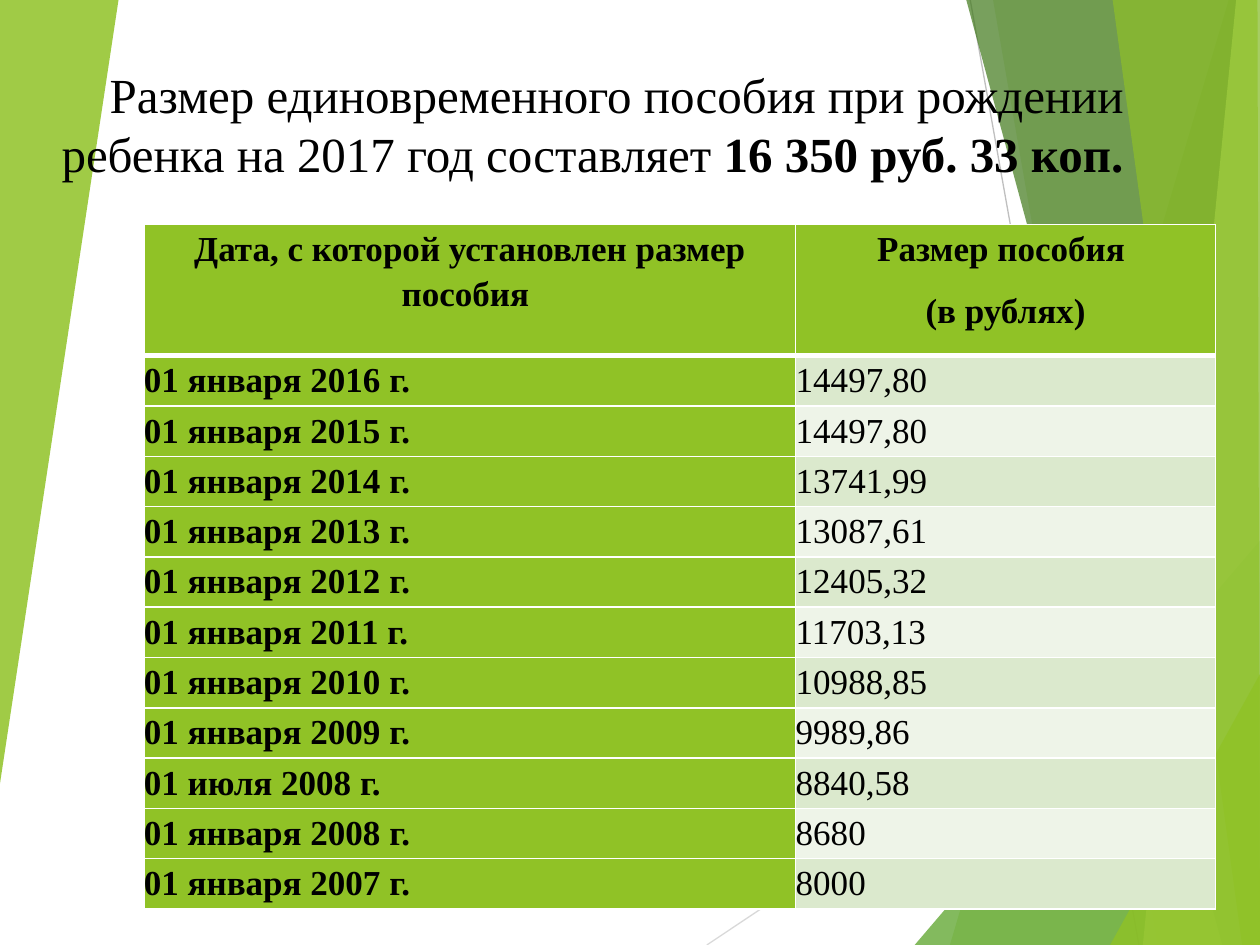
from lxml.etree import SubElement
from pptx import Presentation
from pptx.dml.color import RGBColor
from pptx.enum.shapes import MSO_CONNECTOR
from pptx.enum.text import MSO_ANCHOR, MSO_AUTO_SIZE, PP_ALIGN
from pptx.oxml import parse_xml
from pptx.oxml.ns import nsdecls, qn
from pptx.util import Cm, Pt

BLACK = RGBColor(0x00, 0x00, 0x00)
GREEN = RGBColor(0x90, 0xC2, 0x26)
MID_GREEN = RGBColor(0x54, 0xA0, 0x21)
DARK_GREEN = RGBColor(0x3F, 0x78, 0x19)
LIME = RGBColor(0xC0, 0xE4, 0x74)
BANDS = (RGBColor(0xDB, 0xE9, 0xCD), RGBColor(0xEE, 0xF4, 0xE8))
PALE_GRAY = RGBColor(0xD9, 0xD9, 0xD9)
GRAY = RGBColor(0xBF, 0xBF, 0xBF)
FONT = "Times New Roman"

HEADER = ("Дата, с которой установлен размер пособия ", "Размер пособия \n(в рублях)")
ROWS = (
    ("01 января 2016 г.", "14497,80"),
    ("01 января 2015 г.", "14497,80"),
    ("01 января 2014 г.", "13741,99"),
    ("01 января 2013 г.", "13087,61"),
    ("01 января 2012 г.", "12405,32"),
    ("01 января 2011 г.", "11703,13"),
    ("01 января 2010 г.", "10988,85"),
    ("01 января 2009 г.", "9989,86"),
    ("01 июля 2008 г.", "8840,58"),
    ("01 января 2008 г.", "8680"),
    ("01 января 2007 г.", "8000"),
)


def style_run(r, size, bold):
    """Give a run the slide's typeface and black colour."""
    r.font.name = FONT
    r.font.size = Pt(size)
    r.font.bold = bold
    r.font.color.rgb = BLACK


def add_facet(slide, left, top, points, color, opacity):
    """Draw a translucent polygon from points in centimetres within a box."""
    pts = [(left + Cm(x), top + Cm(y)) for x, y in points]
    builder = slide.shapes.build_freeform(*pts[0])
    builder.add_line_segments(pts[1:])
    sp = builder.convert_to_shape()
    sp.shadow.inherit = False
    sp.fill.solid()
    sp.fill.fore_color.rgb = color
    sp.line.fill.background()
    clr = sp.fill._xPr.find(qn("a:solidFill"))[0]
    SubElement(clr, qn("a:alpha")).set("val", str(opacity * 1000))


def add_ray(slide, left, top, start, end, color):
    """Draw a thin straight line between two points within a box."""
    ln = slide.shapes.add_connector(
        MSO_CONNECTOR.STRAIGHT,
        left + Cm(start[0]), top + Cm(start[1]),
        left + Cm(end[0]), top + Cm(end[1]),
    )
    ln.line.color.rgb = color
    ln.line.width = Pt(0.75)
    SubElement(ln._element.spPr, qn("a:effectLst"))


def add_right_facets(slide, left, top, w, h):
    """Build the layered facets and rays, with w and h in centimetres."""
    add_ray(slide, left, top, (-4.15, h), (w, 11.6), PALE_GRAY)
    add_ray(slide, left, top, (1.16, 0), (4.56, h), GRAY)
    facets = (
        (((6.37, 0), (0.75, h), (w, h), (w, 0)), GREEN, 30),
        (((1.62, 0), (4.94, h), (w, h), (w, 0)), GREEN, 20),
        (((0.04, h), (w, 10.9), (w, h)), MID_GREEN, 72),
        (((1.08, 0), (6.24, h), (w, h), (w, 0)), DARK_GREEN, 70),
        (((6.52, 0), (4.64, h), (w, h), (w, 0)), LIME, 70),
        (((4.03, 0), (6.64, h), (w, h), (6.95, 0)), GREEN, 65),
        (((3.98, h), (w, 13.59), (w, h)), GREEN, 80),
    )
    for points, color, opacity in facets:
        add_facet(slide, left, top, points, color, opacity)


def add_left_facet(slide, left, top, w, h):
    """Build the left wedge, with w and h in centimetres."""
    add_facet(slide, left, top, ((0, 0), (w, 0), (0, h)), GREEN, 85)


def fill_title(slide, left, top, width, height):
    """Place the title above the facets and write its two runs."""
    title = slide.shapes.title
    slide.shapes._spTree.append(title._element)
    title.left, title.top, title.width, title.height = left, top, width, height
    tf = title.text_frame
    tf.word_wrap = True
    tf.auto_size = MSO_AUTO_SIZE.NONE
    tf.vertical_anchor = MSO_ANCHOR.BOTTOM
    tf.margin_bottom = Cm(2.15)
    p = tf.paragraphs[0]
    p.alignment = PP_ALIGN.RIGHT
    parts = (
        ("Размер единовременного пособия при рождении ребенка на 2017 год составляет ", False),
        ("16 350 руб. 33 коп.", True),
    )
    for text, bold in parts:
        r = p.add_run()
        r.text = text
        style_run(r, 28, bold)


def set_borders(cell, top, bottom):
    """Draw white cell borders with the given top and bottom widths in points."""
    tc_pr = cell._tc.get_or_add_tcPr()
    for i, (side, width) in enumerate((("L", 1), ("R", 1), ("T", top), ("B", bottom))):
        tc_pr.insert(i, parse_xml(
            f'<a:ln{side} {nsdecls("a")} w="{Pt(width)}"><a:solidFill>'
            f'<a:srgbClr val="FFFFFF"/></a:solidFill></a:ln{side}>'
        ))


def fill_cell(cell, text, fill, bold, align):
    """Write and format one table cell."""
    cell.margin_left = cell.margin_right = cell.margin_top = cell.margin_bottom = 0
    cell.fill.solid()
    cell.fill.fore_color.rgb = fill
    cell.text_frame.text = text
    for p in cell.text_frame.paragraphs:
        p.alignment = align
        p.line_spacing = 1.15
        p.space_after = Pt(10)
        for r in p.runs:
            style_run(r, 20, bold)


def add_benefit_table(slide, left, top, width, height):
    """Build the table of benefit amounts by date."""
    table = slide.shapes.add_table(len(ROWS) + 1, 2, left, top, width, height).table
    table.first_row = table.horz_banding = False
    table.columns[0].width = Cm(13.14)
    table.columns[1].width = width - Cm(13.14)
    header_height = Cm(2.64)
    row_height = (height - header_height) // len(ROWS)
    for i, texts in enumerate((HEADER,) + ROWS):
        is_header = i == 0
        table.rows[i].height = header_height if is_header else row_height
        align = PP_ALIGN.CENTER if is_header else PP_ALIGN.LEFT
        for j, text in enumerate(texts):
            cell = table.cell(i, j)
            fill = GREEN if is_header or j == 0 else BANDS[(i - 1) % 2]
            fill_cell(cell, text, fill, is_header or j == 0, align)
            set_borders(cell, 3 if i == 1 else 1, 3 if is_header else 1)


def main():
    """Build and save the slide."""
    prs = Presentation()
    prs.slide_width, prs.slide_height = Cm(25.4), Cm(19.05)
    slide = prs.slides.add_slide(prs.slide_layouts[5])
    add_right_facets(slide, Cm(18.4), Cm(0), 7, 19.05)
    add_left_facet(slide, Cm(0), Cm(0), 2.39, 15.8)
    fill_title(slide, Cm(0.5), Cm(1.73), Cm(22.4), Cm(4.09))
    add_benefit_table(slide, Cm(2.9), Cm(4.53), Cm(21.6), Cm(13.8))
    prs.save("out.pptx")


if __name__ == "__main__":
    main()
